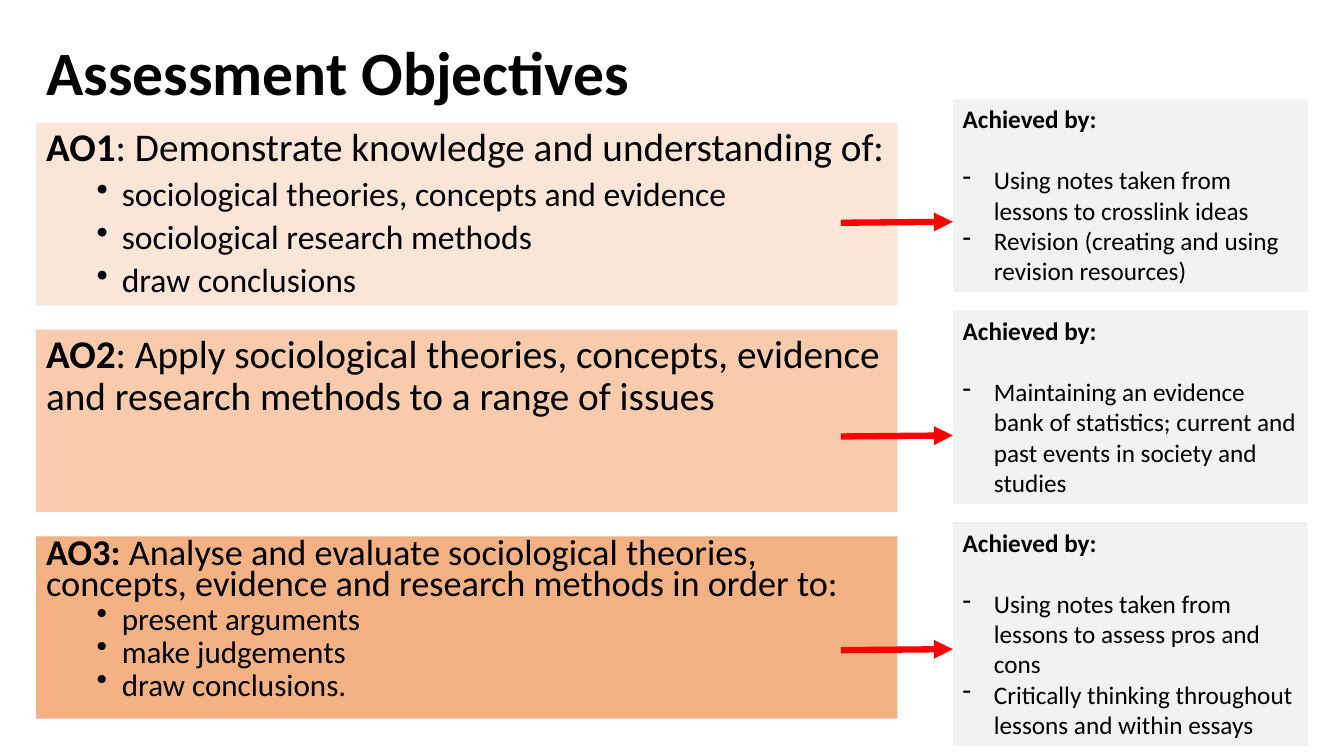
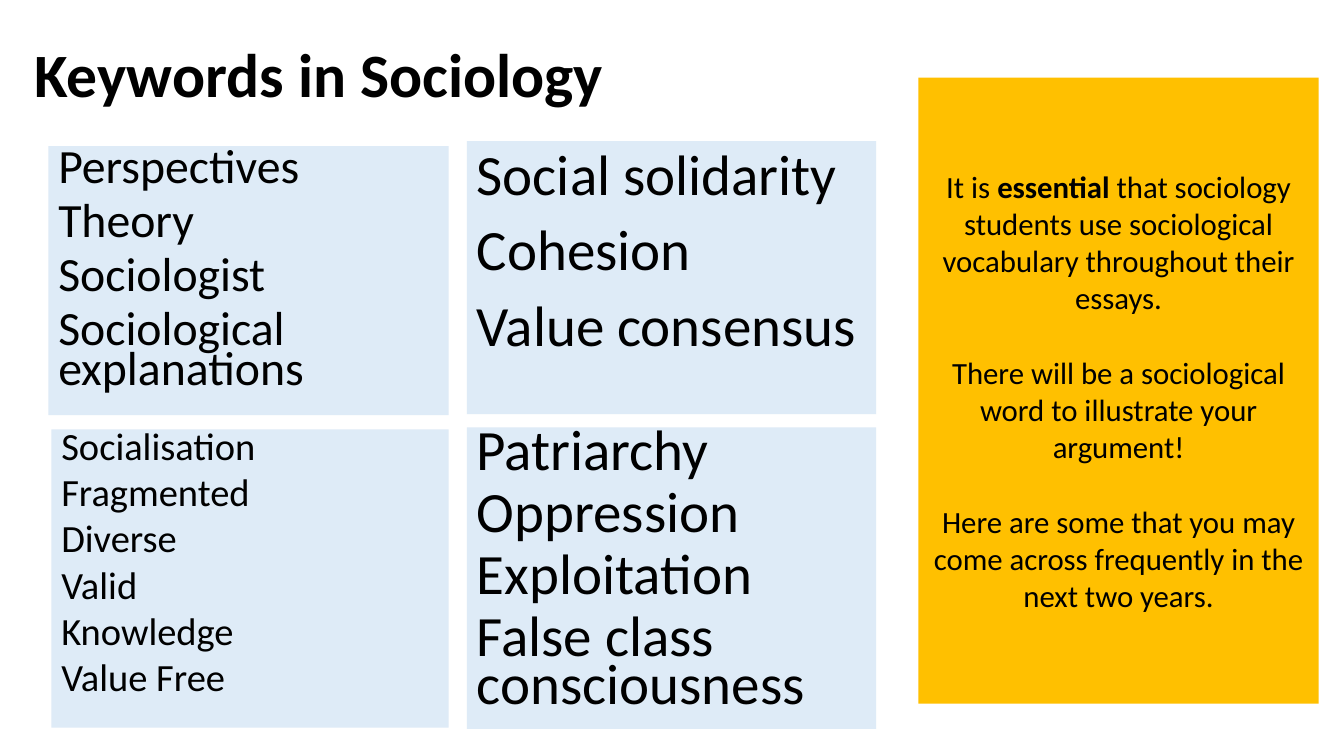
"""Build two sociology slides: assessment objectives and keywords."""
from dataclasses import dataclass

from lxml.etree import SubElement
from pptx import Presentation
from pptx.dml.color import RGBColor
from pptx.enum.shapes import MSO_CONNECTOR, MSO_SHAPE
from pptx.enum.text import MSO_ANCHOR, MSO_AUTO_SIZE, PP_ALIGN
from pptx.oxml.ns import qn
from pptx.slide import Slide
from pptx.text.text import _Paragraph
from pptx.util import Inches, Pt

BLACK = RGBColor(0x00, 0x00, 0x00)
RED = RGBColor(0xFF, 0x00, 0x00)
GREY = RGBColor(0xF2, 0xF2, 0xF2)
PALE_BLUE = RGBColor(0xDE, 0xEB, 0xF7)
GOLD = RGBColor(0xFF, 0xC0, 0x00)
ORANGES = (
    RGBColor(0xFB, 0xE5, 0xD6),
    RGBColor(0xF8, 0xCB, 0xAD),
    RGBColor(0xF4, 0xB1, 0x83),
)
FONT = "Calibri"
TITLE_ONLY = 5


@dataclass(frozen=True)
class Box:
    """Position and size in inches."""

    left: float
    top: float
    width: float
    height: float


@dataclass(frozen=True)
class Bullet:
    """Bullet sign with its hanging indent in inches."""

    sign: str
    margin: float
    hang: float


@dataclass(frozen=True)
class Line:
    """One paragraph, given as (text, bold) runs, with its layout."""

    runs: tuple[tuple[str, bool], ...]
    size: float
    spacing: float = 1.0
    before: float = 0
    after: float = 0
    bullet: Bullet | None = None
    align: PP_ALIGN = PP_ALIGN.LEFT


@dataclass(frozen=True)
class Objective:
    """An assessment objective and the ways to achieve it."""

    code: str
    statement: str
    skills: tuple[str, ...]
    methods: tuple[str, ...]
    size: float
    skill_size: float
    spacing: float
    card_height: float


@dataclass(frozen=True)
class KeywordGroup:
    """A panel of sociological keywords."""

    box: Box
    size: float
    spacing: float
    words: tuple[str, ...]


DOT = Bullet("•", 0.75, 0.25)
DASH = Bullet("-", 0.31, 0.31)

OBJECTIVES = (
    Objective(
        "AO1", ": Demonstrate knowledge and understanding of:",
        ("sociological theories, concepts and evidence",
         "sociological research methods", "draw conclusions"),
        ("Using notes taken from lessons to crosslink ideas",
         "Revision (creating and using revision resources)"),
        28, 24, 0.9, 1.92,
    ),
    Objective(
        "AO2",
        ": Apply sociological theories, concepts, evidence and research "
        "methods to a range of issues",
        (),
        ("Maintaining an evidence bank of statistics; current and past "
         "events in society and studies",),
        28, 24, 0.9, 1.92,
    ),
    Objective(
        "AO3: ",
        "Analyse and evaluate sociological theories, concepts, evidence and "
        "research methods in order to:",
        ("present arguments", "make judgements", "draw conclusions."),
        ("Using notes taken from lessons to assess pros and cons",
         "Critically thinking throughout lessons and within essays"),
        25.9, 22.2, 0.7, 2.22,
    ),
)

KEYWORD_GROUPS = (
    KeywordGroup(
        Box(0.48, 1.45, 3.97, 2.67), 34.1, 0.7,
        ("Perspectives", "Theory", "Sociologist", "Sociological explanations"),
    ),
    KeywordGroup(
        Box(4.63, 1.4, 4.06, 2.71), 40.7, 0.9,
        ("Social solidarity", "Cohesion", "Value consensus"),
    ),
    KeywordGroup(
        Box(0.51, 4.26, 3.94, 2.96), 27.5, 0.7,
        ("Socialisation", "Fragmented", "Diverse", "Valid", "Knowledge",
         "Value Free"),
    ),
    KeywordGroup(
        Box(4.63, 4.24, 4.06, 2.99), 40.7, 0.7,
        ("Patriarchy", "Oppression", "Exploitation",
         "False class consciousness"),
    ),
)

ADVICE = (
    (("It is ", False), ("essential", True),
     (" that sociology students use sociological vocabulary throughout their "
      "essays.", False)),
    (("There will be a sociological word to illustrate your argument!",
      False),),
    (("Here are some that you may come across frequently in the next two "
      "years.", False),),
)


def write_line(paragraph: _Paragraph, line: Line) -> None:
    """Fill a paragraph with the runs and layout of a line."""
    paragraph.alignment = line.align
    paragraph.line_spacing = line.spacing
    paragraph.space_before = Pt(line.before)
    paragraph.space_after = Pt(line.after)
    if line.bullet:
        properties = paragraph._p.get_or_add_pPr()
        properties.set("marL", str(Inches(line.bullet.margin)))
        properties.set("indent", str(-Inches(line.bullet.hang)))
        SubElement(properties, qn("a:buChar"), char=line.bullet.sign)
    paragraph.font.name = FONT
    paragraph.font.size = Pt(line.size)
    paragraph.font.color.rgb = BLACK
    for text, bold in line.runs:
        run = paragraph.add_run()
        run.text = text
        run.font.bold = bold


def add_panel(slide: Slide, box: Box, fill: RGBColor, lines: list[Line],
              anchor: MSO_ANCHOR = MSO_ANCHOR.TOP) -> None:
    """Draw a filled rectangle holding the lines."""
    panel = slide.shapes.add_shape(
        MSO_SHAPE.RECTANGLE, Inches(box.left), Inches(box.top),
        Inches(box.width), Inches(box.height))
    panel.shadow.inherit = False
    panel.fill.solid()
    panel.fill.fore_color.rgb = fill
    panel.line.fill.background()
    frame = panel.text_frame
    frame.word_wrap = True
    frame.vertical_anchor = anchor
    for index, line in enumerate(lines):
        write_line(frame.add_paragraph() if index else frame.paragraphs[0],
                   line)


def add_arrow(slide: Slide, top: float) -> None:
    """Draw a red arrow from an objective to its card."""
    arrow = slide.shapes.add_connector(
        MSO_CONNECTOR.STRAIGHT, Inches(8.34), Inches(top + 0.01),
        Inches(9.45), Inches(top))
    arrow.line.color.rgb = RED
    arrow.line.width = Pt(4.5)
    SubElement(arrow.line._get_or_add_ln(), qn("a:tailEnd"), type="triangle")
    SubElement(arrow._element.spPr, qn("a:effectLst"))


def add_titled_slide(deck: Presentation, heading: str, box: Box) -> Slide:
    """Add a title-only slide with the shared title style."""
    slide = deck.slides.add_slide(deck.slide_layouts[TITLE_ONLY])
    title = slide.shapes.title
    title.left, title.top = Inches(box.left), Inches(box.top)
    title.width, title.height = Inches(box.width), Inches(box.height)
    frame = title.text_frame
    frame.auto_size = MSO_AUTO_SIZE.NONE
    frame.word_wrap = True
    frame.vertical_anchor = MSO_ANCHOR.MIDDLE
    write_line(frame.paragraphs[0], Line(((heading, True),), 44, 0.9))
    return slide


def build_objectives(deck: Presentation) -> None:
    """Draw each objective, its card and the arrow between them."""
    slide = add_titled_slide(deck, "Assessment Objectives",
                             Box(0.36, 0.1, 11.5, 1.3))
    for row, (objective, fill) in enumerate(zip(OBJECTIVES, ORANGES)):
        statement = Line(
            ((objective.code, True), (objective.statement, False)),
            objective.size, objective.spacing, before=10)
        skills = [
            Line(((skill, False),), objective.skill_size, objective.spacing,
                 before=5, bullet=DOT)
            for skill in objective.skills
        ]
        add_panel(slide, Box(0.36, 1.22 + 2.05 * row, 8.54, 1.81), fill,
                  [statement, *skills])
        methods = [Line(((method, False),), 18, bullet=DASH)
                   for method in objective.methods]
        add_panel(
            slide, Box(9.45, 0.98 + 2.1 * row, 3.52, objective.card_height),
            GREY, [Line((("Achieved by:", True),), 18, after=22), *methods])
    for row in range(len(OBJECTIVES)):
        add_arrow(slide, 2.2 + 2.12 * row)


def build_keywords(deck: Presentation) -> None:
    """Draw the keyword panels and the advice beside them."""
    slide = add_titled_slide(deck, "Keywords in Sociology",
                             Box(0.24, 0.13, 12.84, 1.28))
    for group in KEYWORD_GROUPS:
        add_panel(slide, group.box, PALE_BLUE, [
            Line(((word, False),), group.size, group.spacing, before=10)
            for word in group.words
        ])
    add_panel(slide, Box(9.11, 0.77, 3.97, 6.21), GOLD, [
        Line(runs, 22, before=27 if index else 0, align=PP_ALIGN.CENTER)
        for index, runs in enumerate(ADVICE)
    ], MSO_ANCHOR.MIDDLE)


def main() -> None:
    """Build and save the deck."""
    deck = Presentation()
    deck.slide_width, deck.slide_height = Inches(13.33), Inches(7.5)
    build_objectives(deck)
    build_keywords(deck)
    deck.save("out.pptx")


if __name__ == "__main__":
    main()
